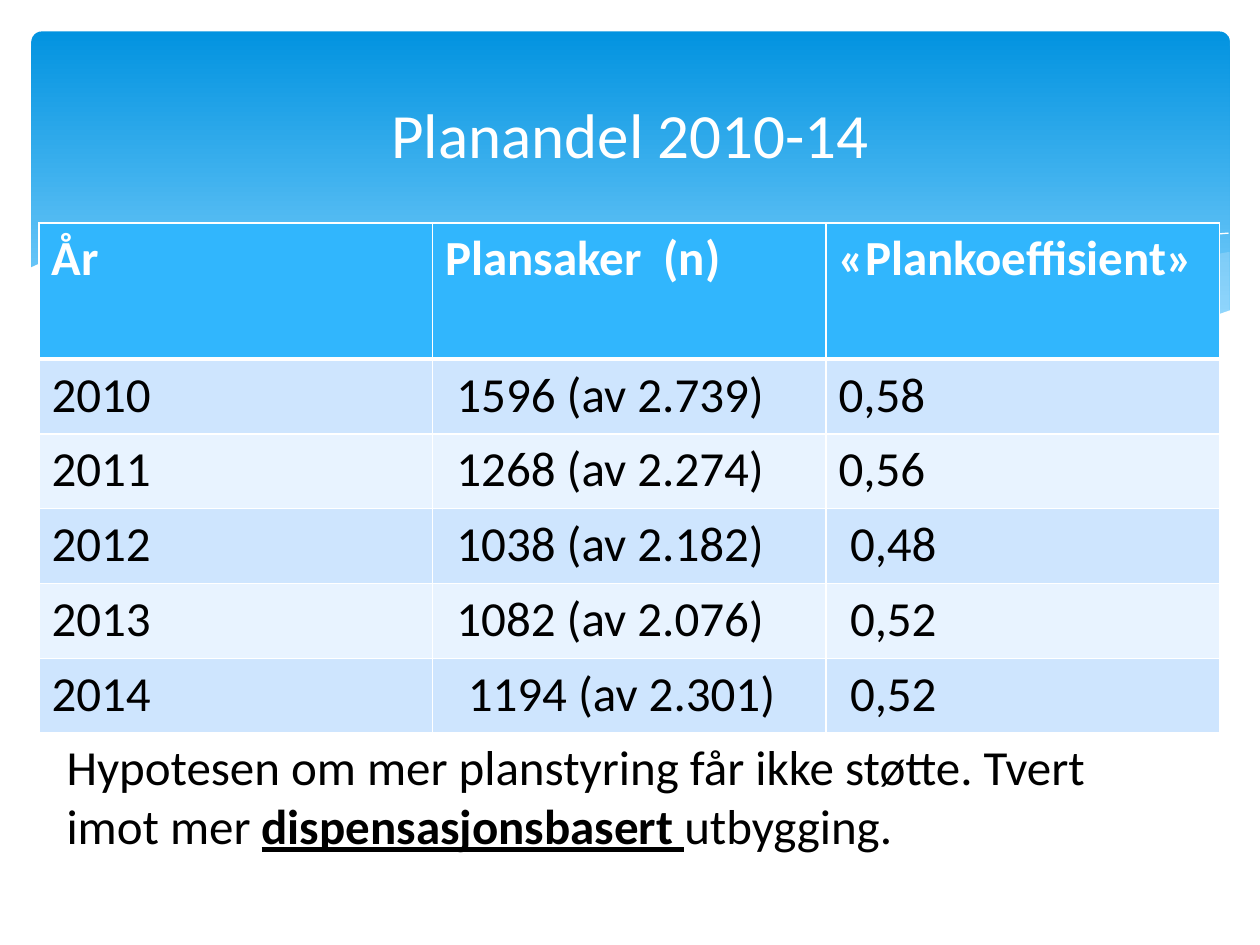
from dataclasses import dataclass

from lxml import etree
from pptx import Presentation
from pptx import util as u
from pptx.dml import color
from pptx.enum import shapes, text
from pptx.oxml import ns


@dataclass(frozen=True)
class Theme:
    font: str = "Calibri"
    title_size: int = 36
    body_size: int = 28
    white: str = "FFFFFF"
    black: str = "000000"
    banner_top: str = "0293E0"
    banner_bottom: str = "83D3FE"
    mist: str = "C6E7FC"
    header: str = "31B6FD"
    bands: tuple = ("CEE5FE", "E8F3FF")


THEME = Theme()

RIGHT_SWELL = [
    (9.5, 1.75), (8.96, 1.85), (8.36, 1.98), (7.54, 2.17), (6.81, 2.32),
    (6.36, 2.4), (6.8, 2.46), (7.32, 2.51), (7.78, 2.53), (8.29, 2.51),
    (8.72, 2.45), (9.1, 2.37), (9.51, 2.22), (9.51, 1.75),
]
LONG_SWELL = [
    (8.68, 2.48), (8.12, 2.4), (7.5, 2.29), (6.81, 2.15), (6.04, 1.97),
    (5.44, 1.83), (4.89, 1.73), (4.4, 1.66), (3.74, 1.61), (3.19, 1.61),
    (2.61, 1.66), (3.17, 1.74), (3.79, 1.86), (4.66, 2.07), (5.59, 2.27),
    (6.25, 2.39), (6.84, 2.47), (7.36, 2.52), (7.93, 2.53), (8.42, 2.51),
]
LONG_CREST = [
    (2.84, 1.7), (3.28, 1.64), (3.91, 1.62), (4.64, 1.65), (5.31, 1.72),
    (6.11, 1.83), (7.02, 2.01), (7.7, 2.16), (8.82, 2.47),
]
RIGHT_CREST = [
    (5.88, 2.32), (6.47, 2.16), (7.23, 1.98), (8.11, 1.79), (8.7, 1.69),
    (9.13, 1.63), (9.5, 1.6),
]
WHITE_WAVE = [
    (9.52, 2.21), (9.15, 2.34), (8.74, 2.44), (8.25, 2.5), (7.68, 2.51),
    (7.01, 2.47), (6.23, 2.37), (5.3, 2.2), (4.22, 1.95), (3.4, 1.77),
    (2.67, 1.65), (1.86, 1.59), (1.21, 1.6), (0.7, 1.66), (0.34, 1.74),
    (0.11, 1.82), (-0.02, 1.88), (-0.02, 3.04), (9.52, 3.04),
]

ROWS = [
    ("År", "Plansaker  (n)", "«Plankoeffisient»"),
    ("2010", "1596 (av 2.739)", "0,58"),
    ("2011", "1268 (av 2.274)", "0,56"),
    ("2012", "1038 (av 2.182)", "0,48"),
    ("2013", "1082 (av 2.076)", "0,52"),
    ("2014", "1194 (av 2.301)", "0,52"),
]
INDENTS = [(0, 0), (1, 0), (1, 0), (1, 1), (1, 1), (2, 1)]


def rgb(value):
    return color.RGBColor.from_string(value)


def style(paragraph, size, ink, bold=False):
    paragraph.font.name = THEME.font
    paragraph.font.size = u.Pt(size)
    paragraph.font.color.rgb = rgb(ink)
    paragraph.font.bold = bold


def add_wave(slide, left, top, points, fill=None, alpha=100):
    places = [(u.Inches(left + x), u.Inches(top + y)) for x, y in points]
    builder = slide.shapes.build_freeform(*places[0])
    builder.add_line_segments(places[1:], close=fill is not None)
    wave = builder.convert_to_shape()
    wave.shadow.inherit = False
    if fill is None:
        wave.fill.background()
        wave.line.color.rgb = rgb(THEME.white)
        wave.line.width = u.Pt(0)
        return
    wave.fill.solid()
    wave.fill.fore_color.rgb = rgb(fill)
    wave.line.fill.background()
    if alpha < 100:
        tint = wave.fill._xPr.find(".//" + ns.qn("a:srgbClr"))
        etree.SubElement(tint, ns.qn("a:alpha"), val=str(alpha * 1000))


def add_banner(slide, left, top, width, height):
    banner = slide.shapes.add_shape(
        shapes.MSO_SHAPE.ROUNDED_RECTANGLE,
        *map(u.Inches, (left, top, width, height)))
    banner.adjustments[0] = 0.03
    banner.shadow.inherit = False
    banner.line.fill.background()
    banner.fill.gradient()
    banner.fill.gradient_angle = 270
    stops = ((0, THEME.banner_top), (0.9, THEME.banner_bottom))
    for stop, (position, tint) in zip(banner.fill.gradient_stops, stops):
        stop.position = position
        stop.color.rgb = rgb(tint)
    add_wave(slide, left, top, RIGHT_SWELL, THEME.mist, 29)
    add_wave(slide, left, top, LONG_SWELL, THEME.mist, 40)
    add_wave(slide, left, top, LONG_CREST)
    add_wave(slide, left, top, RIGHT_CREST)
    add_wave(slide, left, top, WHITE_WAVE, THEME.white)


def add_borders(cell, bottom):
    properties = cell._tc.get_or_add_tcPr()
    for side, width in (("L", 1), ("R", 1), ("T", 1), ("B", bottom)):
        edge = etree.SubElement(
            properties, ns.qn(f"a:ln{side}"), w=str(u.Pt(width)))
        paint = etree.SubElement(edge, ns.qn("a:solidFill"))
        etree.SubElement(paint, ns.qn("a:srgbClr"), val=THEME.white)


def add_plan_table(slide, left, top, width, height):
    header_height = 1.08
    row_height = (height - header_height) / (len(ROWS) - 1)
    table = slide.shapes.add_table(
        len(ROWS), len(ROWS[0]),
        *map(u.Inches, (left, top, width, height))).table
    for column in table.columns:
        column.width = u.Inches(width / len(ROWS[0]))
    for r, values in enumerate(ROWS):
        is_header = r == 0
        table.rows[r].height = u.Inches(header_height if is_header else row_height)
        for c, value in enumerate(values):
            cell = table.cell(r, c)
            cell.text = value
            steps = (0, *INDENTS[r])[c]
            cell.margin_left = u.Inches(0.1 + 0.09 * steps)
            style(cell.text_frame.paragraphs[0], THEME.body_size,
                  THEME.white if is_header else THEME.black, is_header)
            add_borders(cell, 3 if is_header else 1)
            cell.fill.solid()
            cell.fill.fore_color.rgb = rgb(
                THEME.header if is_header else THEME.bands[(r - 1) % 2])


def add_text_frame(slide, box):
    frame = slide.shapes.add_textbox(*map(u.Inches, box)).text_frame
    frame.word_wrap = True
    return frame


def add_title(slide, *box):
    frame = add_text_frame(slide, box)
    frame.vertical_anchor = text.MSO_ANCHOR.MIDDLE
    heading = frame.paragraphs[0]
    heading.text = "Planandel 2010-14"
    heading.alignment = text.PP_ALIGN.CENTER
    style(heading, THEME.title_size, THEME.white)


def add_conclusion(slide, *box):
    conclusion = add_text_frame(slide, box).paragraphs[0]
    style(conclusion, THEME.body_size, THEME.black)
    conclusion.add_run().text = (
        "Hypotesen om mer planstyring får ikke støtte. Tvert imot mer ")
    emphasis = conclusion.add_run()
    emphasis.text = "dispensasjonsbasert "
    emphasis.font.bold = True
    emphasis.font.underline = True
    conclusion.add_run().text = "utbygging."


def main():
    deck = Presentation()
    deck.slide_width, deck.slide_height = u.Inches(10), u.Inches(7.5)
    slide = deck.slides.add_slide(deck.slide_layouts[6])
    add_banner(slide, 0.25, 0.25, 9.51, 2.7)
    add_plan_table(slide, 0.31, 1.77, 9.37, 4.05)
    add_title(slide, 0.5, 0.37, 9, 1.37)
    add_conclusion(slide, 0.43, 5.8, 8.9, 1.04)
    deck.save("out.pptx")


if __name__ == "__main__":
    main()
